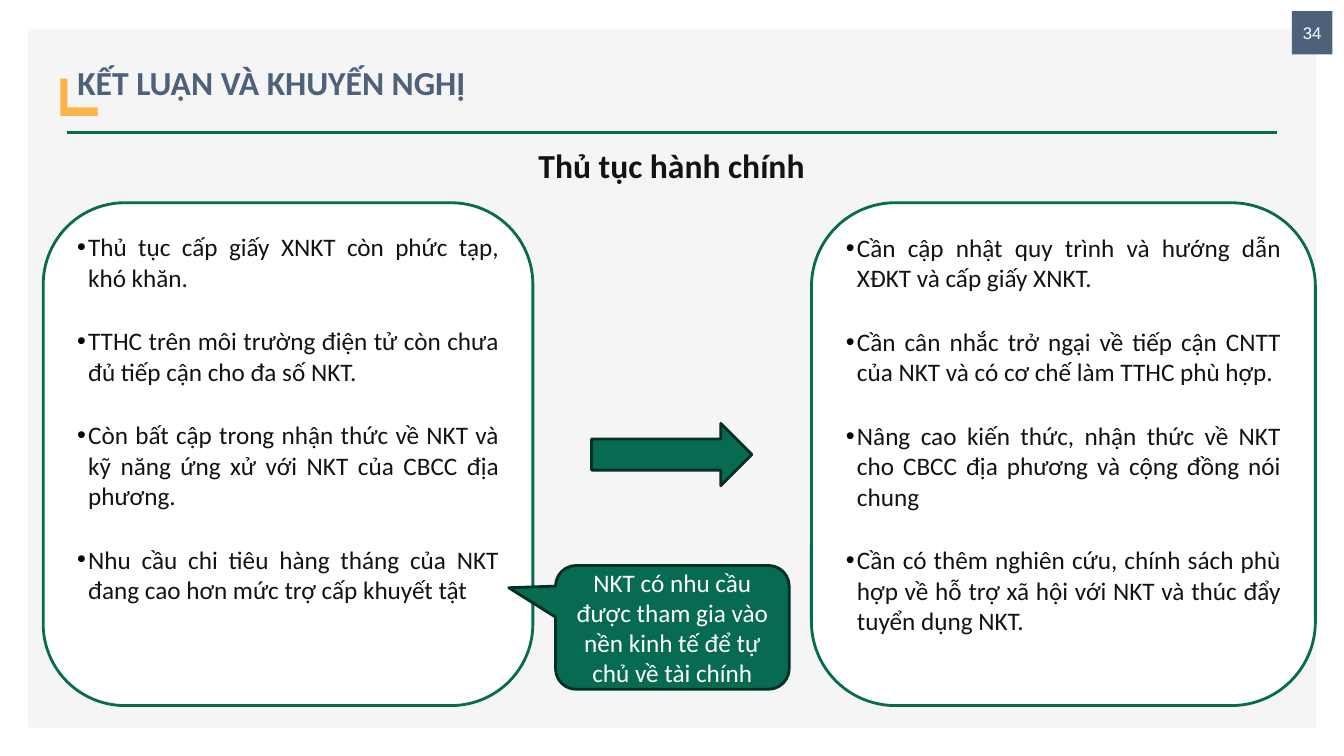
"""Build the slide on conclusions and recommendations for administrative procedures."""
from dataclasses import dataclass

import pptx
import pptx.dml.color
import pptx.enum.shapes
import pptx.enum.text
import pptx.oxml.ns
import pptx.util
from lxml import etree

Cm = pptx.util.Cm
Pt = pptx.util.Pt
Shape = pptx.enum.shapes.MSO_SHAPE
Align = pptx.enum.text.PP_ALIGN
Anchor = pptx.enum.text.MSO_ANCHOR

TITLE = "KẾT LUẬN VÀ KHUYẾN NGHỊ"
SUBTITLE = "Thủ tục hành chính"
PAGE_NUMBER = "34"
NEED = "NKT có nhu cầu được tham gia vào nền kinh tế để tự chủ về tài chính"
FINDINGS = [
    "Thủ tục cấp giấy XNKT còn phức tạp, khó khăn.",
    "TTHC trên môi trường điện tử còn chưa đủ tiếp cận cho đa số NKT.",
    "Còn bất cập trong nhận thức về NKT và kỹ năng ứng xử với NKT của CBCC địa phương.",
    "Nhu cầu chi tiêu hàng tháng của NKT đang cao hơn mức trợ cấp khuyết tật",
]
RECOMMENDATIONS = [
    "Cần cập nhật quy trình và hướng dẫn XĐKT và cấp giấy XNKT.",
    "Cần cân nhắc trở ngại về tiếp cận CNTT của NKT và có cơ chế làm TTHC phù hợp.",
    "Nâng cao kiến thức, nhận thức về NKT cho CBCC địa phương và cộng đồng nói chung",
    "Cần có thêm nghiên cứu, chính sách phù hợp về hỗ trợ xã hội với NKT và thúc đẩy tuyển dụng NKT.",
]


@dataclass(frozen=True)
class Theme:
    """Colours, fonts and type sizes."""
    page: str = "F5F5F5"
    white: str = "FFFFFF"
    ink: str = "131313"
    slate: str = "4E617A"
    amber: str = "FDB347"
    green: str = "076B51"
    dark_green: str = "032F24"
    bullet: str = "000000"
    font: str = "Calibri"
    number_font: str = "Arial"
    heading: int = 24
    body: int = 18
    number: int = 12
    outline: int = 2


theme = Theme()
PANEL_TOP, PANEL_HEIGHT = 5.11, 12.67
HANG = Cm(0.28)
PARAGRAPH_GAP = Pt(12)


def rgb(code):
    return pptx.dml.color.RGBColor.from_string(code)


def add_block(slide, kind, box, fill, outline=None):
    block = slide.shapes.add_shape(kind, *map(Cm, box))
    block.shadow.inherit = False
    block.fill.solid()
    block.fill.fore_color.rgb = rgb(fill)
    if outline:
        block.line.color.rgb = rgb(outline)
        block.line.width = Pt(theme.outline)
    else:
        block.line.fill.background()
    return block


def style(paragraph, size, color, align, bold=False, font=theme.font):
    paragraph.alignment = align
    for run in paragraph.runs:
        run.font.name = font
        run.font.size = Pt(size)
        run.font.bold = bold
        run.font.color.rgb = rgb(color)


def write(block, text, size, color, align=Align.CENTER, anchor=Anchor.MIDDLE, **options):
    frame = block.text_frame
    frame.word_wrap = True
    frame.vertical_anchor = anchor
    frame.text = text
    for paragraph in frame.paragraphs:
        style(paragraph, size, color, align, **options)
    return frame


def add_bullet(paragraph):
    properties = paragraph._p.get_or_add_pPr()
    properties.set("marL", str(HANG))
    properties.set("indent", str(-HANG))
    qn = pptx.oxml.ns.qn
    bullet_color = etree.SubElement(properties, qn("a:buClr"))
    etree.SubElement(bullet_color, qn("a:srgbClr"), val=theme.bullet)
    etree.SubElement(properties, qn("a:buFont"), typeface="Arial")
    etree.SubElement(properties, qn("a:buChar"), char="•")


def add_panel(slide, left, width, points):
    panel = add_block(slide, Shape.ROUNDED_RECTANGLE,
                      (left, PANEL_TOP, width, PANEL_HEIGHT), theme.white, theme.green)
    frame = write(panel, "\n".join(points), theme.body, theme.ink, Align.JUSTIFY, Anchor.TOP)
    for position, paragraph in enumerate(frame.paragraphs):
        add_bullet(paragraph)
        paragraph.space_after = PARAGRAPH_GAP
        if position:
            paragraph.space_before = PARAGRAPH_GAP


def add_header(slide):
    add_block(slide, Shape.RECTANGLE, (0.71, 0.74, 32.46, 17.6), theme.page)
    rule = slide.shapes.add_connector(pptx.enum.shapes.MSO_CONNECTOR.STRAIGHT,
                                      Cm(1.68), Cm(3.33), Cm(32.18), Cm(3.33))
    rule.line.color.rgb = rgb(theme.green)
    rule.line.width = Pt(theme.outline)
    etree.SubElement(rule._element.spPr, pptx.oxml.ns.qn("a:effectLst"))

    number = add_block(slide, Shape.RECTANGLE, (32.56, 0.28, 1.02, 1.09), theme.slate)
    write(number, PAGE_NUMBER, theme.number, theme.white, font=theme.number_font)
    add_block(slide, Shape.RECTANGLE, (1.52, 1.98, 0.94, 0.94), theme.amber)
    title = add_block(slide, Shape.RECTANGLE, (1.7, 0.91, 30.15, 1.8), theme.page)
    heading = write(title, TITLE, theme.heading, theme.slate, Align.LEFT, bold=True)
    heading.paragraphs[0].line_spacing = 1.5
    subtitle = slide.shapes.add_textbox(*map(Cm, (12.95, 3.53, 7.95, 1.27)))
    write(subtitle, SUBTITLE, theme.heading, theme.ink, anchor=Anchor.TOP, bold=True)


def main():
    deck = pptx.Presentation()
    deck.slide_width, deck.slide_height = Cm(33.87), Cm(19.05)
    slide = deck.slides.add_slide(deck.slide_layouts[6])
    add_header(slide)
    add_panel(slide, 1.09, 12.34, FINDINGS)
    callout = add_block(slide, Shape.ROUNDED_RECTANGULAR_CALLOUT,
                        (14, 14.25, 5.89, 3.12), theme.green, theme.dark_green)
    callout.adjustments[0] = -0.7
    callout.adjustments[1] = -0.32
    write(callout, NEED, theme.body, theme.white)
    add_block(slide, Shape.RIGHT_ARROW, (14.91, 10.67, 4.04, 1.57),
              theme.green, theme.dark_green)
    add_panel(slide, 20.45, 12.7, RECOMMENDATIONS)
    deck.save("out.pptx")


if __name__ == "__main__":
    main()
